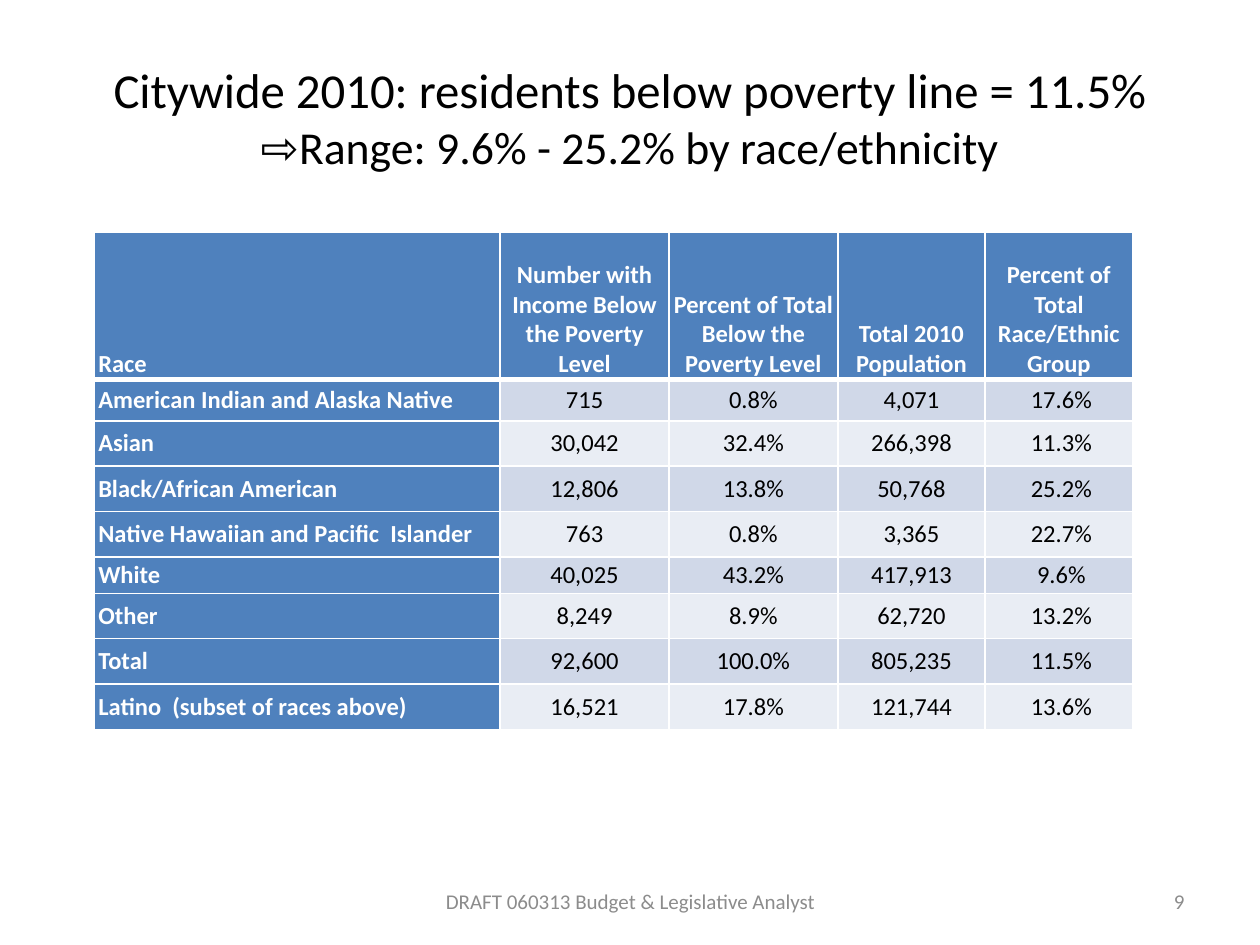
from dataclasses import dataclass

from lxml import etree
from pptx import Presentation
from pptx import util as u
from pptx.dml.color import RGBColor
from pptx.enum import text
from pptx.oxml import ns

TITLE = [("Citywide 2010: residents below poverty line = 11.5%", 27.9),
         ("⇨Range: 9.6% - 25.2% by race/ethnicity", 26.1)]
ROWS = [
    ("Race", "Number with Income Below the Poverty Level",
     "Percent of Total Below the Poverty Level", "Total 2010\nPopulation",
     "Percent of Total Race/Ethnic Group"),
    ("American Indian and Alaska Native", "715", "0.8%", "4,071", "17.6%"),
    ("Asian", "30,042", "32.4%", "266,398", "11.3%"),
    ("Black/African American", "12,806", "13.8%", "50,768", "25.2%"),
    ("Native Hawaiian and Pacific  Islander", "763", "0.8%", "3,365", "22.7%"),
    ("White", "40,025", "43.2%", "417,913", "9.6%"),
    ("Other", "8,249", "8.9%", "62,720", "13.2%"),
    ("Total", "92,600", "100.0%", "805,235", "11.5%"),
    ("Latino  (subset of races above)", "16,521", "17.8%", "121,744", "13.6%"),
]
COL_W = [3.22, 1.34, 1.34, 1.17, 1.17]
ROW_H = [1.17, 0.33, 0.36, 0.36, 0.36, 0.29, 0.36, 0.36, 0.36]
FOOTER, PAGE = "DRAFT 060313 Budget & Legislative Analyst", "9"

ALIGN, ANCHOR = text.PP_ALIGN, text.MSO_ANCHOR


@dataclass(frozen=True)
class Theme:
    font: str = "Calibri"
    ink: str = "000000"
    white: str = "FFFFFF"
    grey: str = "8C8C8C"
    head: str = "4F81BD"
    bands: tuple = ("E9EDF4", "D0D8E8")
    table_size: float = 14
    footer_size: float = 12


T = Theme()


def add_run(p, words, size, color, bold=False):
    r = p.add_run()
    r.text = words
    f = r.font
    f.name, f.size, f.bold = T.font, u.Pt(size), bold
    f.color.rgb = RGBColor.from_string(color)


def add_text(s, box, lines, color, align):
    """Add a middle-anchored text box; lines are (words, size) pairs."""
    tf = s.shapes.add_textbox(*map(u.Inches, box)).text_frame
    tf.word_wrap = True
    tf.vertical_anchor = ANCHOR.MIDDLE
    p = tf.paragraphs[0]
    p.alignment = align
    for i, (words, size) in enumerate(lines):
        if i:
            p.add_line_break()
        add_run(p, words, size, color)


def add_borders(cell, top, bottom):
    tcPr = cell._tc.get_or_add_tcPr()
    for side, width in (("L", 1), ("R", 1), ("T", top), ("B", bottom)):
        ln = etree.SubElement(tcPr, ns.qn("a:ln" + side), w=str(u.Pt(width)))
        fill = etree.SubElement(ln, ns.qn("a:solidFill"))
        etree.SubElement(fill, ns.qn("a:srgbClr"), val=T.white)


def fill_cell(cell, words, row, col):
    is_head = row == 0 or col == 0
    last_value = row > 0 and col == len(COL_W) - 1
    add_borders(cell, 3 if row == 1 else 1, 3 if row == 0 else 1)
    cell.fill.solid()
    cell.fill.fore_color.rgb = RGBColor.from_string(T.head if is_head else T.bands[row % 2])
    cell.margin_top = cell.margin_bottom = 0
    cell.margin_left = u.Inches(0.04 if last_value else 0.03)
    cell.margin_right = u.Inches(0 if last_value else 0.03)
    cell.vertical_anchor = ANCHOR.MIDDLE if row else ANCHOR.BOTTOM
    tf = cell.text_frame
    for i, line in enumerate(words.split("\n")):
        p = tf.add_paragraph() if i else tf.paragraphs[0]
        p.alignment = ALIGN.CENTER if col else ALIGN.LEFT
        add_run(p, line, T.table_size, T.white if is_head else T.ink, is_head)


def add_poverty_table(s):
    table = s.shapes.add_table(
        len(ROWS), len(COL_W), u.Inches(0.75), u.Inches(1.84),
        u.Inches(sum(COL_W)), u.Inches(sum(ROW_H))).table
    for column, width in zip(table.columns, COL_W):
        column.width = u.Inches(width)
    for r, (values, height) in enumerate(zip(ROWS, ROW_H)):
        table.rows[r].height = u.Inches(height)
        for c, words in enumerate(values):
            fill_cell(table.cell(r, c), words, r, c)


def main():
    prs = Presentation()
    prs.slide_width, prs.slide_height = u.Inches(10), u.Inches(7.5)
    s = prs.slides.add_slide(prs.slide_layouts[6])
    add_text(s, (0.5, 0.3, 9, 1.25), TITLE, T.ink, ALIGN.CENTER)
    add_poverty_table(s)
    add_text(s, (3.42, 6.95, 3.17, 0.4), [(FOOTER, T.footer_size)], T.grey, ALIGN.CENTER)
    add_text(s, (7.17, 6.95, 2.33, 0.4), [(PAGE, T.footer_size)], T.grey, ALIGN.RIGHT)
    prs.save("out.pptx")


if __name__ == "__main__":
    main()
